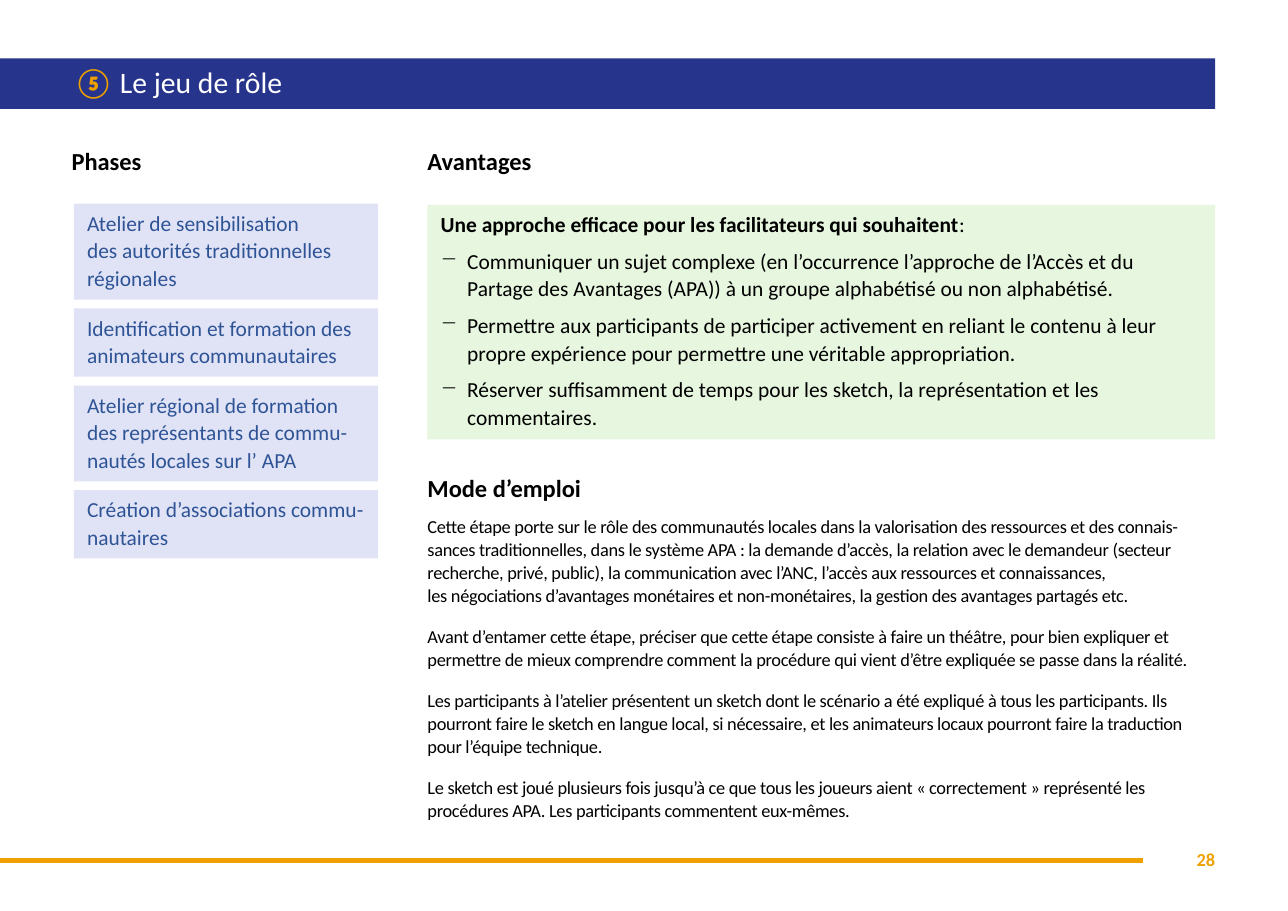
import pptx
import pptx.dml.color
import pptx.enum.shapes
import pptx.enum.text
import pptx.oxml.ns
import pptx.util
from lxml import etree

RGBColor = pptx.dml.color.RGBColor
PP_ALIGN = pptx.enum.text.PP_ALIGN
MSO_ANCHOR = pptx.enum.text.MSO_ANCHOR
Pt = pptx.util.Pt
qn = pptx.oxml.ns.qn

NAVY = RGBColor(0x27, 0x34, 0x8B)
AMBER = RGBColor(0xEE, 0xA1, 0x00)
BLUE = RGBColor(0x2F, 0x54, 0x96)
LAVENDER = RGBColor(0xE0, 0xE3, 0xF6)
GREEN = RGBColor(0xDE, 0xF3, 0xD2)
BLACK = RGBColor(0, 0, 0)
WHITE = RGBColor(255, 255, 255)

# Content
TITLE_NUMBER, TITLE = "⑤ ", "Le jeu de rôle"
PAGE_NUMBER = "28"
PHASES = [  # text, number of lines
    ("Atelier de sensibilisation \ndes autorités traditionnelles régionales", 3),
    ("Identification et formation des animateurs communautaires", 2),
    ("Atelier régional de formation des représentants de commu-nautés locales sur l’ APA", 3),
    ("Création d’associations commu-nautaires", 2),
]
ADVANTAGES_LEAD = "Une approche efficace pour les facilitateurs qui souhaitent"
ADVANTAGES = [
    "Communiquer un sujet complexe (en l’occurrence l’approche de l’Accès et du Partage des "
    "Avantages (APA)) à un groupe alphabétisé ou non alphabétisé.",
    "Permettre aux participants de participer activement en reliant le contenu à leur propre "
    "expérience pour permettre une véritable appropriation.",
    "Réserver suffisamment de temps pour les sketch, la représentation et les commentaires.",
]
INSTRUCTIONS = [
    "Cette étape porte sur le rôle des communautés locales dans la valorisation des ressources et "
    "des connais-sances traditionnelles, dans le système APA : la demande d’accès, la relation avec "
    "le demandeur (secteur recherche, privé, public), la communication avec l’ANC, l’accès aux "
    "ressources et connaissances, \nles négociations d’avantages monétaires et non-monétaires, la "
    "gestion des avantages partagés etc.",
    "Avant d’entamer cette étape, préciser que cette étape consiste à faire un théâtre, pour bien "
    "expliquer et permettre de mieux comprendre comment la procédure qui vient d’être expliquée se "
    "passe dans la réalité.",
    "Les participants à l’atelier présentent un sketch dont le scénario a été expliqué à tous les "
    "participants. Ils pourront faire le sketch en langue local, si nécessaire, et les animateurs "
    "locaux pourront faire la traduction pour l’équipe technique.",
    "Le sketch est joué plusieurs fois jusqu’à ce que tous les joueurs aient « correctement » "
    "représenté les procédures APA. Les participants commentent eux-mêmes.",
]

# Layout, 100 px to the inch
EMU_PER_PX = 9144
PAGE_WIDTH, PAGE_HEIGHT = 1169, 827
RIGHT_EDGE = 1103
PHASE_LEFT, PHASE_TOP, PHASE_WIDTH, PHASE_GAP = 67, 185, 276, 8
LINE_HEIGHT, PHASE_PADDING = 25, 12
COLUMN_LEFT = 388
COLUMN_WIDTH = RIGHT_EDGE - COLUMN_LEFT
HEADINGS = [  # text, left, top, width
    ("Phases", 65, 136, 276),
    ("Avantages", COLUMN_LEFT, 136, 353),
    ("Mode d’emploi", COLUMN_LEFT, 432, COLUMN_WIDTH),
]
BULLET_INDENT = 24
CARD_INSETS = (12, 4, 12, 8)


def px(length):
    return pptx.util.Emu(round(length * EMU_PER_PX))


def set_frame(shape, insets=(0, 0, 0, 0), anchor=MSO_ANCHOR.TOP):
    frame = shape.text_frame
    frame.word_wrap = True
    frame.auto_size = pptx.enum.text.MSO_AUTO_SIZE.NONE
    frame.vertical_anchor = anchor
    frame.margin_left, frame.margin_top, frame.margin_right, frame.margin_bottom = map(px, insets)
    return frame


def add_textbox(left, top, width, height):
    return set_frame(page.shapes.add_textbox(px(left), px(top), px(width), px(height)))


def add_card(left, top, width, height, color):
    card = page.shapes.add_shape(pptx.enum.shapes.MSO_SHAPE.RECTANGLE,
                                 px(left), px(top), px(width), px(height))
    card.shadow.inherit = False
    card.fill.solid()
    card.fill.fore_color.rgb = color
    card.line.fill.background()
    return card, set_frame(card, CARD_INSETS)


def start_para(frame, spacing, before=0, after=0, align=PP_ALIGN.LEFT):
    first = frame.paragraphs[0]
    para = frame.add_paragraph() if first.runs else first
    para.alignment = align
    para.line_spacing = spacing
    para.space_before, para.space_after = Pt(before), Pt(after)
    return para


def add_span(para, text, size, color, bold=False, tracking=0):
    for index, line in enumerate(text.split("\n")):
        if index:
            para.add_line_break()
        span = para.add_run()
        span.text = line
        span.font.name, span.font.size, span.font.bold = "Calibri", Pt(size), bold
        span.font.color.rgb = color
        if tracking:
            span.font._element.set("spc", str(tracking))


def add_dash(para):
    properties = para._p.get_or_add_pPr()
    properties.set("marL", str(px(BULLET_INDENT)))
    properties.set("indent", str(-px(BULLET_INDENT)))
    etree.SubElement(properties, qn("a:buChar"), char="−")


deck = pptx.Presentation()
deck.slide_width, deck.slide_height = px(PAGE_WIDTH), px(PAGE_HEIGHT)
page = deck.slides.add_slide(deck.slide_layouts[5])

# Title band
band = page.shapes.title
band.left, band.top, band.width, band.height = px(0), px(53), px(RIGHT_EDGE), px(46)
band.fill.solid()
band.fill.fore_color.rgb = NAVY
para = start_para(set_frame(band, (67, 4, 39, 4), MSO_ANCHOR.MIDDLE), 0.9)
add_span(para, TITLE_NUMBER, 19.4, AMBER, bold=True, tracking=-10)
add_span(para, TITLE, 19.4, WHITE)

# Headings
for text, left, top, width in HEADINGS:
    add_span(start_para(add_textbox(left, top, width, 32), 0.9), text, 16, BLACK, bold=True)

# Phase cards
top = PHASE_TOP
for text, line_count in PHASES:
    height = line_count * LINE_HEIGHT + PHASE_PADDING
    card, frame = add_card(PHASE_LEFT, top, PHASE_WIDTH, height, LAVENDER)
    add_span(start_para(frame, Pt(18)), text, 14, BLUE)
    top += height + PHASE_GAP

# Advantages
card, frame = add_card(COLUMN_LEFT, 186, COLUMN_WIDTH, 213, GREEN)
fill_color = card.fill._xPr.find(qn("a:solidFill"))[0]
etree.SubElement(fill_color, qn("a:alpha"), val="70000")
para = start_para(frame, Pt(18), after=6)
add_span(para, ADVANTAGES_LEAD, 14, BLACK, bold=True)
add_span(para, ":", 14, BLACK)
for text in ADVANTAGES:
    para = start_para(frame, Pt(18), after=6)
    add_dash(para)
    add_span(para, text, 14, BLACK)

# Instructions
frame = add_textbox(COLUMN_LEFT, 467, COLUMN_WIDTH, 303)
for index, text in enumerate(INSTRUCTIONS):
    para = start_para(frame, Pt(15), before=8.8 if index else 0, after=3)
    add_span(para, text, 12, BLACK, tracking=-20)

# Footer rule and page number
rule = page.shapes.add_connector(pptx.enum.shapes.MSO_CONNECTOR.STRAIGHT,
                                 px(0), px(781), px(1037), px(781))
rule.line.color.rgb = AMBER
rule.line.width = Pt(3)
etree.SubElement(rule._element.spPr, qn("a:effectLst"))
para = start_para(add_textbox(1029, 770, 74, 20), 1.0, align=PP_ALIGN.RIGHT)
add_span(para, PAGE_NUMBER, 12, AMBER, bold=True)

deck.save("out.pptx")
